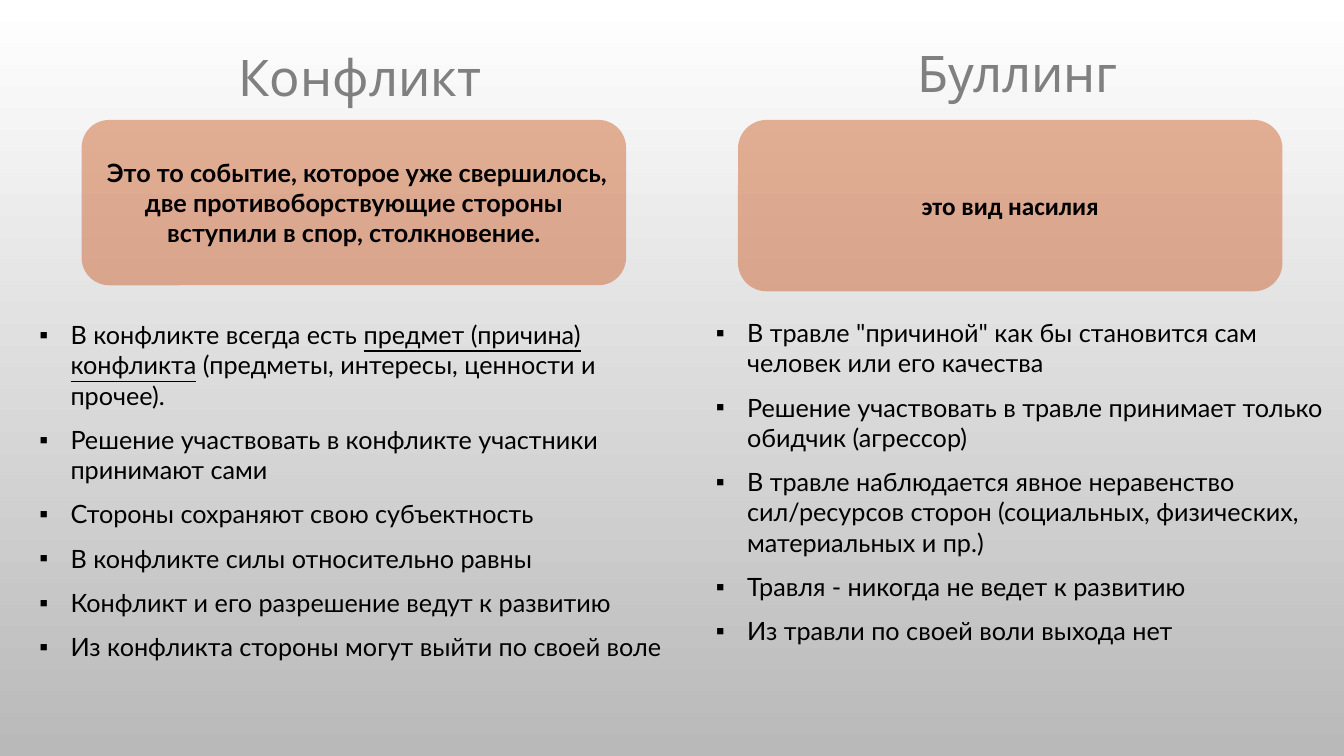
from lxml import etree
from pptx import Presentation
from pptx.dml.color import RGBColor
from pptx.enum.shapes import MSO_SHAPE
from pptx.enum.text import MSO_ANCHOR, PP_ALIGN
from pptx.oxml.ns import qn
from pptx.util import Pt

PX = 9144  # EMU in one px, 100 px to the inch
COLORS = {
    "top": "FFFFFF",
    "bottom": "B9B9B9",
    "title": "808080",
    "text": "000000",
    "card": "CE6633",
}
TITLE = {"name": "Cabin", "size": Pt(36)}
BODY = {"name": "Lato", "size": Pt(18)}
BODY_BOLD = {**BODY, "bold": True}
CALIBRI_BOLD = {**BODY_BOLD, "name": "Calibri"}
NO_MARGINS = {"margin_left": 0, "margin_top": 0, "margin_right": 0, "margin_bottom": 0}

# Each list item is a sequence of text pieces; every second piece is underlined.
COLUMNS = [
    {
        "title": ("Конфликт", (227, 48, 295, 54)),
        "card": (" Это то событие, которое уже свершилось, две противоборствующие "
                 "стороны вступили в спор, столкновение.", (81, 119, 540, 164), BODY_BOLD),
        "list": ([
            ("В конфликте всегда есть ", "предмет (причина) конфликта",
             " (предметы, интересы, ценности и прочее)."),
            ("Решение участвовать в конфликте участники принимают сами",),
            ("Стороны сохраняют свою субъектность",),
            ("В конфликте силы относительно равны",),
            ("Конфликт и его разрешение ведут к развитию",),
            ("Из конфликта стороны могут выйти по своей воле",),
        ], (39, 317, 627, 393)),
    },
    {
        "title": ("Буллинг", (900, 44, 295, 54)),
        "card": ("это вид насилия", (732, 119, 540, 170), CALIBRI_BOLD),
        "list": ([
            ('В травле "причиной" как бы становится сам человек или его качества',),
            ("Решение участвовать в травле принимает только обидчик (агрессор)",),
            ("В травле наблюдается явное неравенство сил/ресурсов сторон "
             "(социальных, физических, материальных и пр.)",),
            ("Травля - никогда не ведет к развитию",),
            ("Из травли по своей воли выхода нет",),
        ], (710, 315, 609, 430)),
    },
]


def apply(target, values):
    for name, value in values.items():
        setattr(target, name, value)


class SlideBuilder:
    def __init__(self, deck):
        self.page = deck.slides.add_slide(deck.slide_layouts[6])

    def color(self, name):
        return RGBColor.from_string(COLORS[name])

    def background(self):
        fill = self.page.background.fill
        fill.gradient()
        fill.gradient_angle = 270
        for stop, name in zip(fill.gradient_stops, ("top", "bottom")):
            stop.color.rgb = self.color(name)

    def span(self, para, text, font, color="text"):
        span = para.add_run()
        span.text = text
        apply(span.font, font)
        span.font.color.rgb = self.color(color)

    def text_frame(self, place, **values):
        frame = self.page.shapes.add_textbox(*(n * PX for n in place)).text_frame
        apply(frame, {"word_wrap": True, **values})
        return frame

    def title(self, text, place):
        para = self.text_frame(place).paragraphs[0]
        para.line_spacing = 0.9
        self.span(para, text, TITLE, "title")

    def card(self, text, place, font):
        box = self.page.shapes.add_shape(
            MSO_SHAPE.ROUNDED_RECTANGLE, *(n * PX for n in place))
        box.shadow.inherit = False
        box.line.fill.background()
        box.fill.solid()
        box.fill.fore_color.rgb = self.color("card")
        tint = box.fill._xPr.find(qn("a:solidFill"))[0]
        etree.SubElement(tint, qn("a:alpha"), val="50000")
        apply(box.text_frame, {"word_wrap": True, "vertical_anchor": MSO_ANCHOR.MIDDLE})
        para = box.text_frame.paragraphs[0]
        para.alignment = PP_ALIGN.CENTER
        self.span(para, text, font)

    def bullet(self, para):
        properties = para._p.get_or_add_pPr()
        apply_indent = {"marL": str(31 * PX), "indent": str(-31 * PX)}
        for name, value in apply_indent.items():
            properties.set(name, value)
        etree.SubElement(properties, qn("a:buFont"), typeface="Arial")
        etree.SubElement(properties, qn("a:buChar"), char="▪")

    def list(self, items, place):
        frame = self.text_frame(place, **NO_MARGINS)
        for index, pieces in enumerate(items):
            para = frame.add_paragraph() if index else frame.paragraphs[0]
            self.bullet(para)
            if index:
                para.space_before = Pt(10)
            for number, piece in enumerate(pieces):
                self.span(para, piece, {**BODY, "underline": number % 2 == 1})


def main():
    deck = Presentation()
    apply(deck, {"slide_width": 1333 * PX, "slide_height": 750 * PX})
    builder = SlideBuilder(deck)
    builder.background()
    for column in COLUMNS:
        builder.title(*column["title"])
        builder.list(*column["list"])
        builder.card(*column["card"])
    deck.save("out.pptx")


if __name__ == "__main__":
    main()
